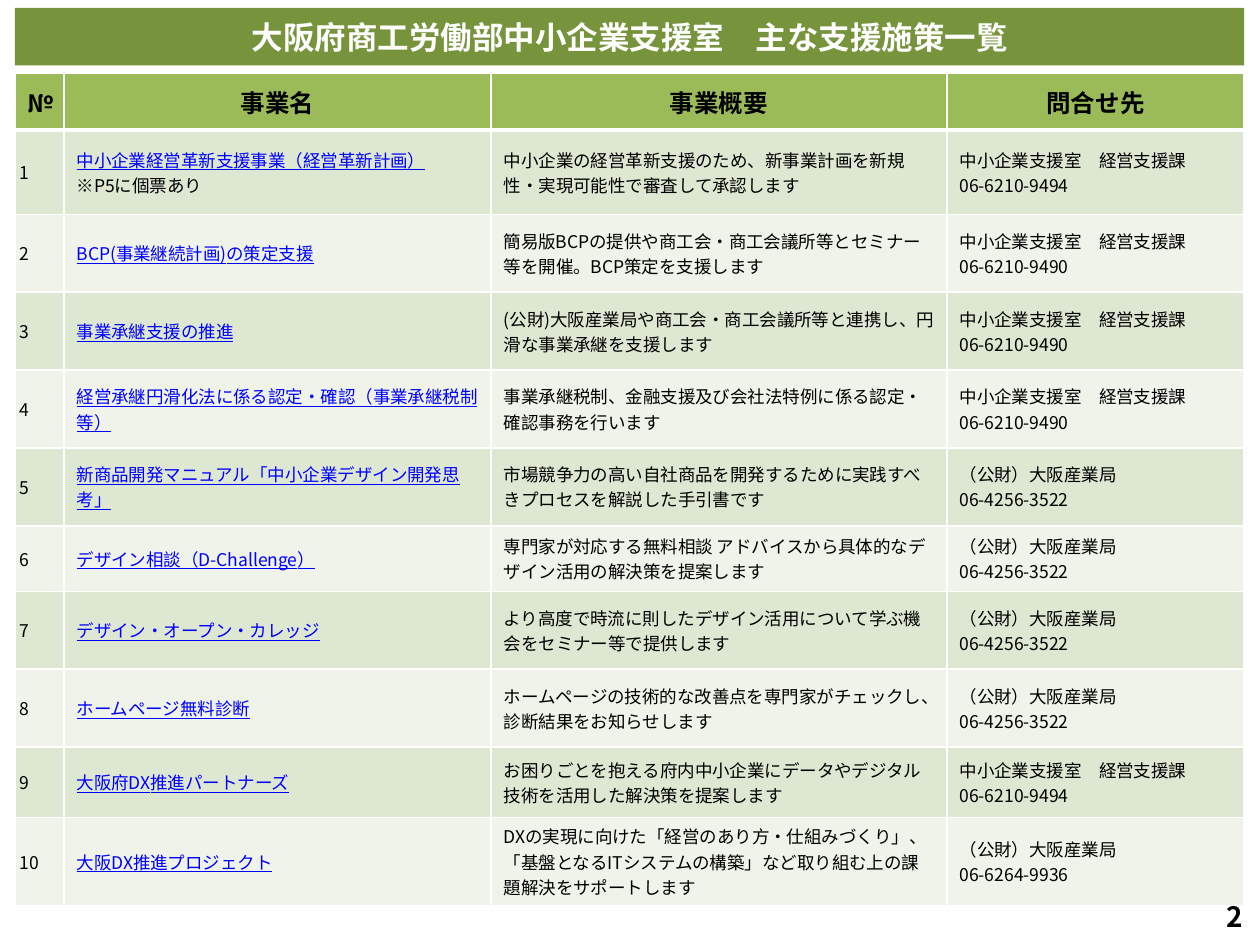
from lxml import etree
from pptx import Presentation
from pptx.dml.color import RGBColor
from pptx.enum.text import MSO_ANCHOR, MSO_AUTO_SIZE, PP_ALIGN
from pptx.oxml.ns import qn
from pptx.util import Cm, Pt

LEFT, CENTER, RIGHT = PP_ALIGN.LEFT, PP_ALIGN.CENTER, PP_ALIGN.RIGHT
MIDDLE = MSO_ANCHOR.MIDDLE
NO_AUTOFIT = MSO_AUTO_SIZE.NONE

FONT = "Noto Sans CJK JP"
COLORS = {
    "banner": "77933C",
    "header": "9BBB59",
    "odd_row": "DEE7D1",
    "even_row": "EFF3EA",
    "border": "FFFFFF",
    "white": "FFFFFF",
    "text": "000000",
    "link": "0000FF",
}

TITLE = "大阪府商工労働部中小企業支援室　主な支援施策一覧"
HEADINGS = ["№", "事業名", "事業概要", "問合せ先"]
COLUMN_WIDTHS = [0.99, 8.61, 9.19, 5.99]
HEADER_HEIGHT = 1.14
ROW_HEIGHTS = [1.7, 1.57, 1.57, 1.57, 1.57, 1.32, 1.57, 1.57, 1.42, 1.78]

SUPPORT_OFFICE = "中小企業支援室　経営支援課"
INDUSTRY_BUREAU = "（公財）大阪産業局"

# Programme name, note below the name, outline, contact office, telephone
PROGRAMMES = [
    ("中小企業経営革新支援事業（経営革新計画）", "※P5に個票あり",
     "中小企業の経営革新支援のため、新事業計画を新規性・実現可能性で審査して承認します",
     SUPPORT_OFFICE, "06-6210-9494"),
    ("BCP(事業継続計画)の策定支援", "",
     "簡易版BCPの提供や商工会・商工会議所等とセミナー等を開催。BCP策定を支援します",
     SUPPORT_OFFICE, "06-6210-9490"),
    ("事業承継支援の推進", "",
     "(公財)大阪産業局や商工会・商工会議所等と連携し、円滑な事業承継を支援します",
     SUPPORT_OFFICE, "06-6210-9490"),
    ("経営承継円滑化法に係る認定・確認（事業承継税制等）", "",
     "事業承継税制、金融支援及び会社法特例に係る認定・確認事務を行います",
     SUPPORT_OFFICE, "06-6210-9490"),
    ("新商品開発マニュアル「中小企業デザイン開発思考」", "",
     "市場競争力の高い自社商品を開発するために実践すべきプロセスを解説した手引書です",
     INDUSTRY_BUREAU, "06-4256-3522"),
    ("デザイン相談（D-Challenge）", "",
     "専門家が対応する無料相談 アドバイスから具体的なデザイン活用の解決策を提案します",
     INDUSTRY_BUREAU, "06-4256-3522"),
    ("デザイン・オープン・カレッジ", "",
     "より高度で時流に則したデザイン活用について学ぶ機会をセミナー等で提供します",
     INDUSTRY_BUREAU, "06-4256-3522"),
    ("ホームページ無料診断", "",
     "ホームページの技術的な改善点を専門家がチェックし、診断結果をお知らせします",
     INDUSTRY_BUREAU, "06-4256-3522"),
    ("大阪府DX推進パートナーズ", "",
     "お困りごとを抱える府内中小企業にデータやデジタル技術を活用した解決策を提案します",
     SUPPORT_OFFICE, "06-6210-9494"),
    ("大阪DX推進プロジェクト", "",
     "DXの実現に向けた「経営のあり方・仕組みづくり」、「基盤となるITシステムの構築」など"
     "取り組む上の課題解決をサポートします",
     INDUSTRY_BUREAU, "06-6264-9936"),
]


def rgb(color):
    return RGBColor.from_string(COLORS[color])


def write_text(frame, text, *, size=10, color="text", bold=False,
               underline=False, align=LEFT, append=False):
    """Write one paragraph, either the first of the frame or an appended one."""
    paragraph = frame.add_paragraph() if append else frame.paragraphs[0]
    paragraph.alignment = align
    run = paragraph.add_run()
    run.text = text
    font = run.font
    font.name, font.size = FONT, Pt(size)
    font.bold, font.underline = bold, underline
    font.color.rgb = rgb(color)
    east_asian = etree.Element(qn("a:ea"), typeface=FONT)
    run._r.rPr.find(qn("a:latin")).addnext(east_asian)


def style_cell(cell, fill, top=1, bottom=1):
    """Set anchor, white borders (widths in points) and fill of a cell."""
    cell.vertical_anchor = MIDDLE
    properties = cell._tc.get_or_add_tcPr()
    for side, width in (("L", 1), ("R", 1), ("T", top), ("B", bottom)):
        line = etree.SubElement(properties, qn(f"a:ln{side}"), w=str(Pt(width)))
        line_fill = etree.SubElement(line, qn("a:solidFill"))
        etree.SubElement(line_fill, qn("a:srgbClr"), val=COLORS["border"])
    cell.fill.solid()
    cell.fill.fore_color.rgb = rgb(fill)


def add_banner(slide):
    banner = slide.shapes.title
    banner.left, banner.top = Cm(0.3), Cm(0.16)
    banner.width, banner.height = Cm(24.78), Cm(1.16)
    banner.fill.solid()
    banner.fill.fore_color.rgb = rgb("banner")
    frame = banner.text_frame
    frame.auto_size = NO_AUTOFIT
    frame.vertical_anchor = MIDDLE
    write_text(frame, TITLE, size=18, color="white", bold=True, align=CENTER)


def fill_header(table):
    for column, heading in enumerate(HEADINGS):
        cell = table.cell(0, column)
        style_cell(cell, "header", bottom=3)
        write_text(cell.text_frame, heading, size=14, bold=True,
                   align=CENTER if column else LEFT)


def fill_programme(table, number, programme):
    name, note, outline, office, telephone = programme
    cells = [table.cell(number, column) for column in range(len(HEADINGS))]
    for cell in cells:
        style_cell(cell, "odd_row" if number % 2 else "even_row",
                   top=3 if number == 1 else 1)
    number_cell, name_cell, outline_cell, contact_cell = cells
    number_cell.margin_left = number_cell.margin_right = Cm(0.1)
    write_text(number_cell.text_frame, str(number))
    write_text(name_cell.text_frame, name, color="link", underline=True)
    if note:
        write_text(name_cell.text_frame, note, append=True)
    write_text(outline_cell.text_frame, outline)
    write_text(contact_cell.text_frame, office)
    write_text(contact_cell.text_frame, telephone, append=True)


def add_programme_table(slide):
    heights = [HEADER_HEIGHT] + ROW_HEIGHTS
    table = slide.shapes.add_table(
        len(heights), len(HEADINGS), Cm(0.3), Cm(1.48),
        Cm(sum(COLUMN_WIDTHS)), Cm(sum(heights))).table
    for column, width in zip(table.columns, COLUMN_WIDTHS):
        column.width = Cm(width)
    for row, height in zip(table.rows, heights):
        row.height = Cm(height)
    fill_header(table)
    for number, programme in enumerate(PROGRAMMES, start=1):
        fill_programme(table, number, programme)


def add_page_number(slide, number):
    frame = slide.shapes.add_textbox(
        Cm(19.38), Cm(17.96), Cm(5.92), Cm(1.02)).text_frame
    frame.word_wrap = True
    frame.vertical_anchor = MIDDLE
    write_text(frame, number, size=16, bold=True, align=RIGHT)


def main():
    presentation = Presentation()
    presentation.slide_width, presentation.slide_height = Cm(25.4), Cm(19.05)
    title_only = presentation.slide_layouts[5]
    slide = presentation.slides.add_slide(title_only)
    add_banner(slide)
    add_programme_table(slide)
    add_page_number(slide, "2")
    presentation.save("out.pptx")


if __name__ == "__main__":
    main()
